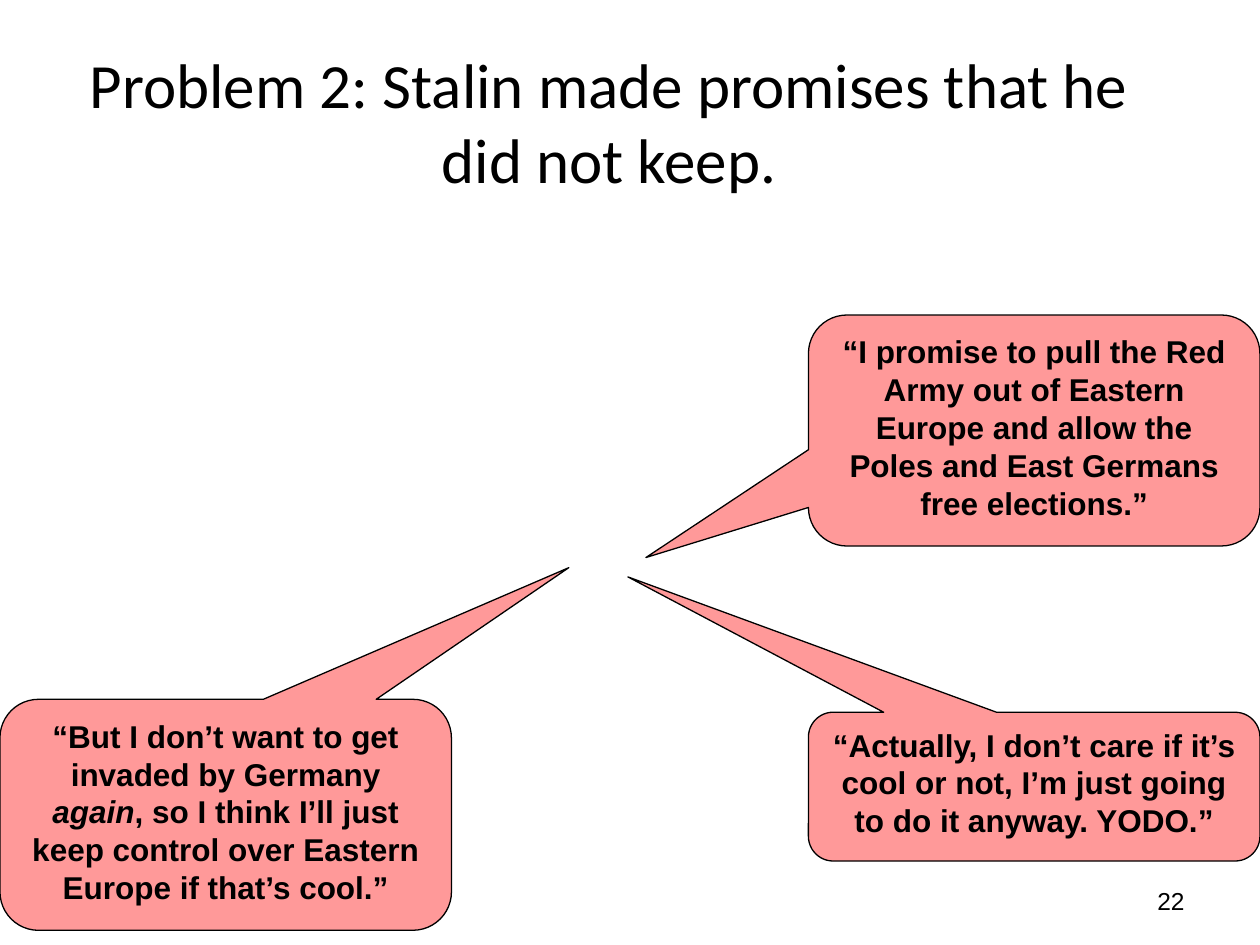
from dataclasses import dataclass

from pptx import Presentation
from pptx.dml.color import RGBColor
from pptx.enum import shapes, text
from pptx.util import Pt


@dataclass(frozen=True)
class Theme:
    ink: RGBColor = RGBColor(0, 0, 0)
    pink: RGBColor = RGBColor(0xFF, 0x99, 0x99)
    head: str = "Calibri"
    body: str = "Arial"
    title: int = 36
    quote: int = 18
    page: int = 14


@dataclass(frozen=True)
class Quote:
    """A speech bubble; tip is the pointer's offset as shares of its size."""
    left: float
    top: float
    height: float
    tip: tuple[float, float]
    words: tuple[str, ...]  # every second piece is italic


THEME = Theme()
WIDE = 720
BUBBLE = 258
RIGHT = WIDE - BUBBLE

QUOTES = (
    Quote(RIGHT, 180, 132, (-0.86, 0.55), (
        "“I promise to pull the Red Army out of Eastern Europe and allow "
        "the Poles and East Germans free elections.”",)),
    Quote(0, 399.6, 132, (0.76, -1.07), (
        "“But I don’t want to get invaded by Germany ",
        "again",
        ", so I think I’ll just keep control over Eastern Europe "
        "if that’s cool.”")),
    Quote(RIGHT, 407, 85, (-0.9, -1.41), (
        "“Actually, I don’t care if it’s cool or not, I’m just going "
        "to do it anyway. YODO.”",)),
)


def style(para, face: str, size: int, align, bold: bool = False) -> None:
    para.alignment = align
    font = para.font
    font.name, font.size, font.bold = face, Pt(size), bold
    font.color.rgb = THEME.ink


def add_title(slide, words: str) -> None:
    box = slide.shapes.title
    box.left, box.top, box.width, box.height = Pt(24), Pt(24), Pt(648), Pt(90)
    frame = box.text_frame
    frame.text = words
    frame.vertical_anchor = text.MSO_ANCHOR.MIDDLE
    style(frame.paragraphs[0], THEME.head, THEME.title, text.PP_ALIGN.CENTER)


def add_page(slide, number: int) -> None:
    box = slide.shapes.add_textbox(Pt(516), Pt(500.4), Pt(168), Pt(28.8))
    frame = box.text_frame
    frame.word_wrap = True
    frame.text = str(number)
    frame.vertical_anchor = text.MSO_ANCHOR.MIDDLE
    style(frame.paragraphs[0], THEME.body, THEME.page, text.PP_ALIGN.RIGHT)


def add_quote(slide, quote: Quote) -> None:
    box = slide.shapes.add_shape(
        shapes.MSO_SHAPE.ROUNDED_RECTANGULAR_CALLOUT,
        Pt(quote.left), Pt(quote.top), Pt(BUBBLE), Pt(quote.height))
    box.adjustments[0], box.adjustments[1] = quote.tip
    box.shadow.inherit = False
    box.fill.solid()
    box.fill.fore_color.rgb = THEME.pink
    box.line.color.rgb = THEME.ink
    box.line.width = Pt(0.75)
    frame = box.text_frame
    frame.word_wrap = True
    frame.vertical_anchor = text.MSO_ANCHOR.TOP
    para = frame.paragraphs[0]
    style(para, THEME.body, THEME.quote, text.PP_ALIGN.CENTER, bold=True)
    for i, piece in enumerate(quote.words):
        run = para.add_run()
        run.text = piece
        if i % 2:
            run.font.italic = True


def main() -> None:
    deck = Presentation()
    deck.slide_width, deck.slide_height = Pt(WIDE), Pt(540)
    slide = deck.slides.add_slide(deck.slide_layouts[5])
    add_page(slide, 22)
    add_title(slide, "Problem 2: Stalin made promises that he did not keep.")
    for quote in QUOTES:
        add_quote(slide, quote)
    deck.save("out.pptx")


if __name__ == "__main__":
    main()
